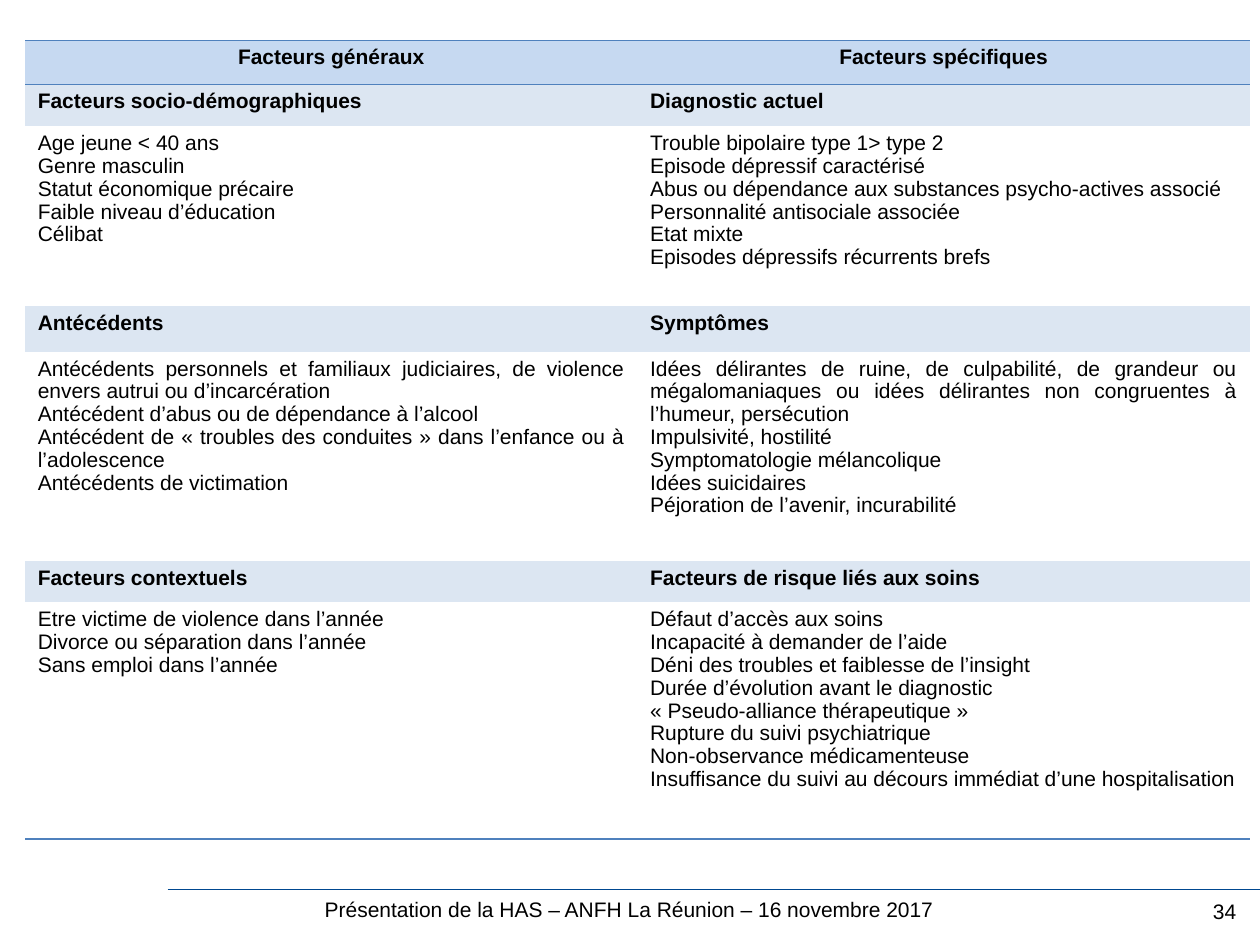
import pptx
import pptx.dml.color
import pptx.enum.shapes
import pptx.enum.text
import pptx.oxml
import pptx.util
from pptx.util import Inches

ALIGN = pptx.enum.text.PP_ALIGN
NAMESPACE = "http://schemas.openxmlformats.org/drawingml/2006/main"
NO_STYLE = "{2D5ABB26-0587-4C30-8999-92F81FD0307C}"
BORDER = "4F81BD"


def color(hex_string):
    return pptx.dml.color.RGBColor.from_string(hex_string)


def write_lines(text_frame, lines, alignment, bold=False, spacing=None):
    """Write one paragraph per line, in black 12 pt Arial."""
    text_frame.word_wrap = True
    for index, line in enumerate(lines):
        paragraph = text_frame.paragraphs[0] if index == 0 else text_frame.add_paragraph()
        paragraph.alignment = alignment
        paragraph.line_spacing = spacing
        run = paragraph.add_run()
        run.text = line
        run.font.name = "Arial"
        run.font.size = pptx.util.Pt(12)
        run.font.bold = bold
        run.font.color.rgb = color("000000")


# Kind of row, height in inches, lines of the left and right cells
rows = [
    ("header", 0.35, ["Facteurs généraux"], ["Facteurs spécifiques"]),
    ("section", 0.33, ["Facteurs socio-démographiques"], ["Diagnostic actuel"]),
    ("body", 1.43,
     ["Age jeune < 40 ans",
      "Genre masculin",
      "Statut économique précaire",
      "Faible niveau d’éducation",
      "Célibat"],
     ["Trouble bipolaire type 1> type 2",
      "Episode dépressif caractérisé",
      "Abus ou dépendance aux substances psycho-actives associé",
      "Personnalité antisociale associée",
      "Etat mixte",
      "Episodes dépressifs récurrents brefs"]),
    ("section", 0.36, ["Antécédents"], ["Symptômes"]),
    ("body", 1.66,
     ["Antécédents personnels et familiaux judiciaires, de violence envers autrui "
      "ou d’incarcération",
      "Antécédent d’abus ou de dépendance à l’alcool",
      "Antécédent de « troubles des conduites » dans l’enfance ou à l’adolescence",
      "Antécédents de victimation"],
     ["Idées délirantes de ruine, de culpabilité, de grandeur ou mégalomaniaques "
      "ou idées délirantes non congruentes à l’humeur, persécution",
      "Impulsivité, hostilité",
      "Symptomatologie mélancolique",
      "Idées suicidaires",
      "Péjoration de l’avenir, incurabilité"]),
    ("section", 0.33, ["Facteurs contextuels"], ["Facteurs de risque liés aux soins"]),
    ("body", 1.88,
     ["Etre victime de violence dans l’année",
      "Divorce ou séparation dans l’année",
      "Sans emploi dans l’année"],
     ["Défaut d’accès aux soins",
      "Incapacité à demander de l’aide",
      "Déni des troubles et faiblesse de l’insight",
      "Durée d’évolution avant le diagnostic",
      "« Pseudo-alliance thérapeutique »",
      "Rupture du suivi psychiatrique",
      "Non-observance médicamenteuse",
      "Insuffisance du suivi au décours immédiat d’une hospitalisation"]),
]
fills = {"header": "C6D9F1", "section": "DCE6F2", "body": "FFFFFF"}
alignments = {"header": ALIGN.CENTER, "section": ALIGN.LEFT, "body": ALIGN.JUSTIFY}

presentation = pptx.Presentation()
presentation.slide_width = Inches(10)
presentation.slide_height = Inches(7.5)
slide = presentation.slides.add_slide(presentation.slide_layouts[6])

# Footer
footer_line = slide.shapes.add_connector(
    pptx.enum.shapes.MSO_CONNECTOR.STRAIGHT,
    Inches(1.33), Inches(7.06), Inches(10), Inches(7.06))
footer_line.line.color.rgb = color("004890")
footer_line.line.width = pptx.util.Pt(0.75)
footer_line._element.spPr.append(
    pptx.oxml.parse_xml(f'<a:effectLst xmlns:a="{NAMESPACE}"/>'))

footer = slide.shapes.add_textbox(Inches(2.42), Inches(7.07), Inches(5.15), Inches(0.3))
write_lines(footer.text_frame,
            ["Présentation de la HAS – ANFH La Réunion – 16 novembre 2017"], ALIGN.CENTER)
page_number = slide.shapes.add_textbox(Inches(7.83), Inches(7.08), Inches(2.08), Inches(0.5))
write_lines(page_number.text_frame, ["34"], ALIGN.RIGHT)

# Table of risk factors
total_height = sum(row[1] for row in rows)
table = slide.shapes.add_table(len(rows), 2, Inches(0.2), Inches(0.32),
                               Inches(9.72), Inches(total_height)).table
table.first_row = False
table.horz_banding = False
table._tbl.tblPr.find(f"{{{NAMESPACE}}}tableStyleId").text = NO_STYLE

for row_index, (kind, height, *cell_lines) in enumerate(rows):
    table.rows[row_index].height = Inches(height)
    if kind == "header":
        edges = ["lnT", "lnB"]
    elif row_index == len(rows) - 1:
        edges = ["lnB"]
    else:
        edges = []
    for column_index, lines in enumerate(cell_lines):
        cell = table.cell(row_index, column_index)
        write_lines(cell.text_frame, lines, alignments[kind], kind != "body", 0.97)
        cell.fill.solid()
        cell.fill.fore_color.rgb = color(fills[kind])
        for position, edge in enumerate(edges):
            cell._tc.get_or_add_tcPr().insert(position, pptx.oxml.parse_xml(
                f'<a:{edge} xmlns:a="{NAMESPACE}" w="12700"><a:solidFill>'
                f'<a:srgbClr val="{BORDER}"/></a:solidFill></a:{edge}>'))

presentation.save("out.pptx")
